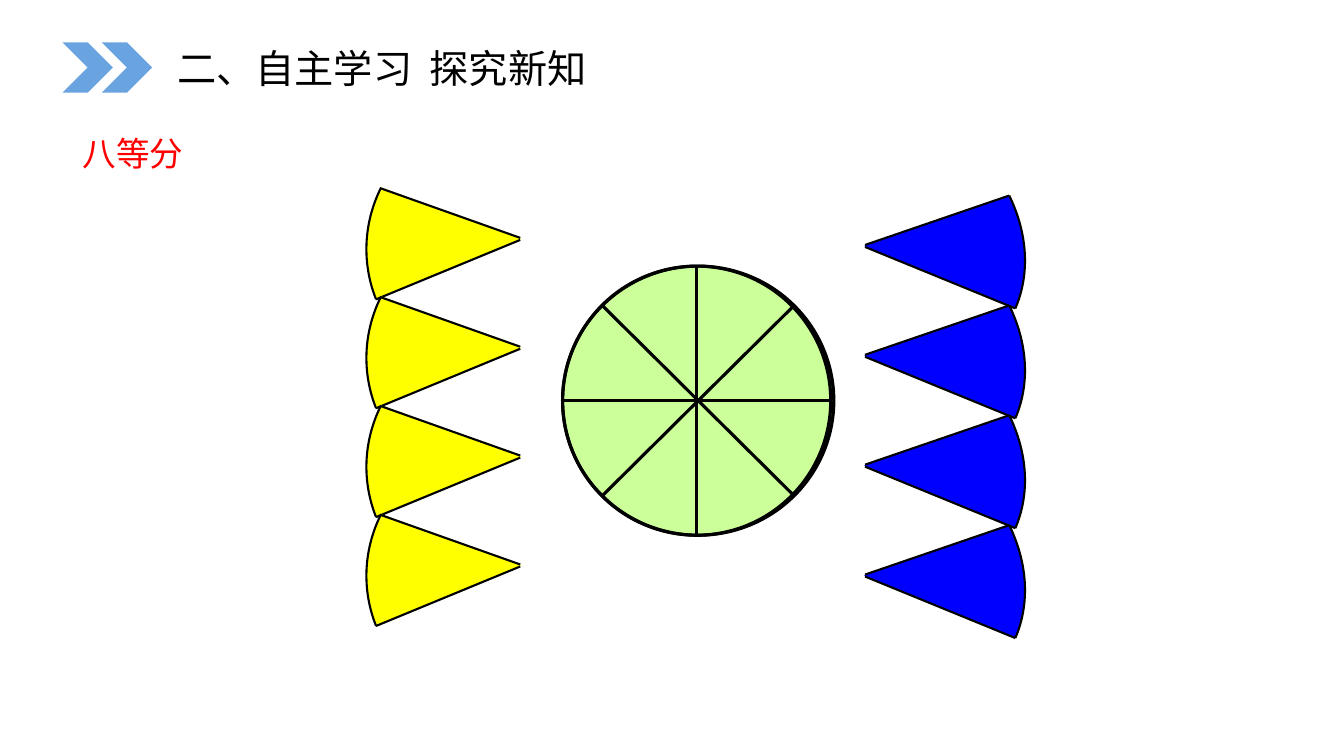
from copy import deepcopy

from lxml import etree
from pptx import Presentation
from pptx.dml.color import RGBColor
from pptx.enum.shapes import MSO_CONNECTOR, MSO_SHAPE
from pptx.enum.text import MSO_ANCHOR, MSO_AUTO_SIZE
from pptx.oxml.ns import qn
from pptx.util import Inches, Pt

CHEVRON = MSO_SHAPE.CHEVRON
OVAL = MSO_SHAPE.OVAL
CROSS = MSO_SHAPE.FLOWCHART_SUMMING_JUNCTION
PLUS = MSO_SHAPE.FLOWCHART_OR
STRAIGHT = MSO_CONNECTOR.STRAIGHT
MIDDLE = MSO_ANCHOR.MIDDLE
TOP = MSO_ANCHOR.TOP
GROW = MSO_AUTO_SIZE.SHAPE_TO_FIT_TEXT
FIXED = MSO_AUTO_SIZE.NONE


def color(code):
    return RGBColor.from_string(code)


class Deck:
    """Hold the style and the current slide, and draw each kind of element."""

    font = "Arial"
    ink = "000000"

    def __init__(self):
        self.prs = Presentation()
        self.prs.slide_width = Inches(13.33)
        self.prs.slide_height = Inches(7.5)
        self.slide = self.prs.slides.add_slide(self.prs.slide_layouts[6])
        self.shapes = self.slide.shapes

    def paint(self, shape, fill=None, line=None):
        shape.shadow.inherit = False
        if fill:
            shape.fill.solid()
            shape.fill.fore_color.rgb = color(fill)
        else:
            shape.fill.background()
        if line:
            shape.line.color.rgb = color(self.ink)
            shape.line.width = Pt(line)
        else:
            shape.line.fill.background()

    def shape(self, kind, box, fill=None, line=None, group=None):
        home = group.shapes if group else self.shapes
        self.paint(home.add_shape(kind, *map(Inches, box)), fill, line)

    def text(self, text, box, size, ink=ink, anchor=TOP, fit=FIXED,
             space=0, lead=1.0):
        frame = self.shapes.add_textbox(*map(Inches, box)).text_frame
        frame.word_wrap = True
        frame.auto_size = fit
        frame.vertical_anchor = anchor
        para = frame.paragraphs[0]
        para.space_before = Pt(space)
        para.line_spacing = lead
        run = para.add_run()
        run.text = text
        run.font.name = self.font
        run.font.size = Pt(size)
        run.font.color.rgb = color(ink)

    def line(self, start, end, group):
        line = group.shapes.add_connector(STRAIGHT, *map(Inches, start + end))
        line.line.color.rgb = color(self.ink)
        line.line.width = Pt(1.5)
        etree.SubElement(line._element.spPr, qn("a:effectLst"))

    def sector(self, arc, tip, fill, group):
        """Draw a filled sector whose outline follows only its arc."""
        first, *rest = [tuple(map(Inches, p)) for p in arc + [tip]]
        pen = group.shapes.build_freeform(*first, scale=1.0)
        pen.add_line_segments(rest, close=True)
        shape = pen.convert_to_shape()
        self.paint(shape, fill, 1.5)
        area = shape._element.spPr.find(".//" + qn("a:path"))
        bend = etree.Element(qn("a:cubicBezTo"))
        for part in list(area)[1:4]:
            bend.append(part[0])
            area.remove(part)
        area.insert(1, bend)
        rim = deepcopy(area)
        for part in list(rim)[2:]:
            rim.remove(part)
        area.set("stroke", "0")
        rim.set("fill", "none")
        area.addprevious(rim)

    def stack(self, top, pitch, fill, arc, tip, edges):
        """Draw four equal sectors, one below the other."""
        group = self.shapes.add_group_shape()
        for row in range(4):
            def drop(point):
                return point[0], point[1] + top + row * pitch

            self.sector([drop(p) for p in arc], drop(tip), fill, group)
            for start, end in edges:
                self.line(drop(start), drop(end), group)


def main():
    deck = Deck()
    for left in (0.62, 1.01):
        deck.shape(CHEVRON, (left, 0.42, 0.5, 0.5), fill="69A4E1")
    deck.text("八等分", (0.72, 1.27, 1.26, 0.5), 24, ink="FF0000",
              fit=GROW, space=12)
    deck.shape(OVAL, (5.58, 2.64, 2.68, 2.67), fill="CCFF99", line=0.75)

    deck.stack(1.94, 1.09, "0000FF",
               [(10.07, 1.12), (10.22, 0.77), (10.19, 0.37), (10.01, 0)],
               (8.57, 0.5),
               [((10.07, 1.12), (8.58, 0.51)), ((10.01, 0), (8.58, 0.49))])
    deck.stack(1.86, 1.08, "FFFF00",
               [(3.73, 1.11), (3.59, 0.76), (3.6, 0.36), (3.78, 0)],
               (5.17, 0.51),
               [((3.73, 1.11), (5.16, 0.52)), ((3.78, 0.01), (5.16, 0.5))])

    wheel = deck.shapes.add_group_shape()
    for kind, width in ((CROSS, 2.69), (PLUS, 2.66)):
        deck.shape(kind, (5.58, 2.64, width, 2.67), line=2.25, group=wheel)

    deck.text("二、自主学习  探究新知", (1.66, 0.47, 5.59, 0.46), 28,
              anchor=MIDDLE, space=10, lead=0.9)
    deck.prs.save("out.pptx")


if __name__ == "__main__":
    main()
